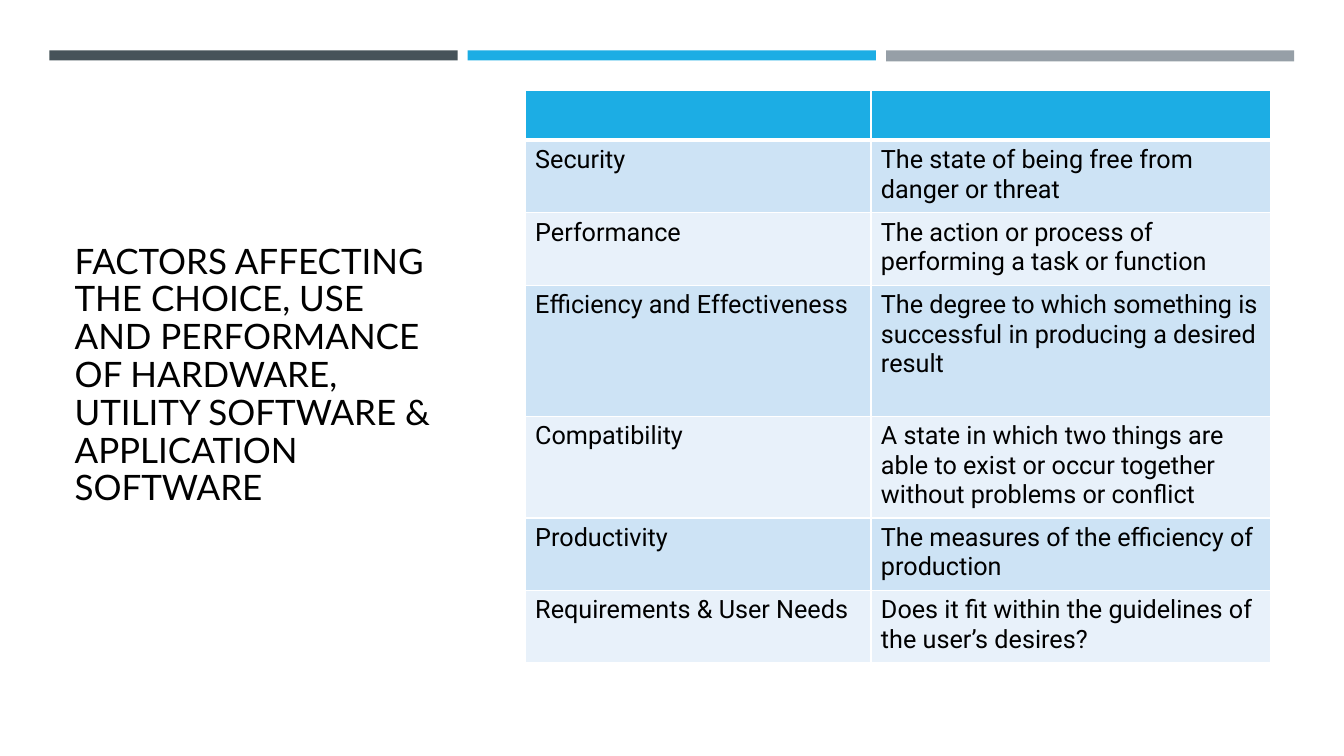
from typing import NamedTuple

from lxml.etree import SubElement
from pptx import Presentation
from pptx.dml.color import RGBColor
from pptx.enum.shapes import MSO_SHAPE as Shape
from pptx.enum.text import MSO_ANCHOR as Anchor, MSO_AUTO_SIZE as AutoSize, PP_ALIGN as Align
from pptx.oxml.ns import qn
from pptx.slide import Slide
from pptx.table import _Cell as Cell
from pptx.text.text import TextFrame
from pptx.util import Pt

WHITE, BLACK, BLUE = "FFFFFF", "000000", "1CADE4"
BAND_FILLS = ("CDE3F5", "E8F1FA")
BAR_LEFT, BAR_TOP, BAR_WIDTH, BAR_STEP = 35.3, 36, 291.6, 298.8
COLUMN_WIDTHS = (247, 285.8)
HEADER_HEIGHT = 35.3
TITLE = ("FACTORS AFFECTING THE CHOICE, USE AND PERFORMANCE OF HARDWARE, "
         "UTILITY SOFTWARE & APPLICATION SOFTWARE")


class Bar(NamedTuple):
    color: str
    height: float


class Factor(NamedTuple):
    name: str
    meaning: str
    height: float = 51.8


BARS = (Bar("465359", 7.2), Bar(BLUE, 7.2), Bar("969FA7", 7.9))
FACTORS = (
    Factor("Security", "The state of being free from danger or threat"),
    Factor("Performance", "The action or process of performing a task or function"),
    Factor("Efficiency and Effectiveness",
           "The degree to which something is successful in producing a desired result", 93.6),
    Factor("Compatibility",
           "A state in which two things are able to exist or occur together "
           "without problems or conflict", 72.7),
    Factor("Productivity", "The measures of the efficiency of production"),
    Factor("Requirements & User Needs",
           "Does it fit within the guidelines of the user’s desires?"),
)


def rgb(color: str) -> RGBColor:
    return RGBColor.from_string(color)


def write_text(frame: TextFrame, text: str, *, font: str, size: float,
               color: str = BLACK, line_spacing: float = 1.0) -> None:
    paragraph = frame.paragraphs[0]
    paragraph.alignment = Align.LEFT
    paragraph.line_spacing = line_spacing
    run = paragraph.add_run()
    run.text = text
    run.font.name = font
    run.font.size = Pt(size)
    run.font.bold = False
    run.font.color.rgb = rgb(color)


def draw_bar(slide: Slide, bar: Bar, position: int) -> None:
    shape = slide.shapes.add_shape(Shape.RECTANGLE, Pt(BAR_LEFT + position * BAR_STEP),
                                   Pt(BAR_TOP), Pt(BAR_WIDTH), Pt(bar.height))
    shape.shadow.inherit = False
    shape.fill.solid()
    shape.fill.fore_color.rgb = rgb(bar.color)
    shape.line.fill.background()


def format_cell(cell: Cell, fill: str, *, top: float = 1, bottom: float = 1) -> None:
    """Fill the cell and give it white borders; top and bottom are line widths."""
    cell.fill.solid()
    cell.fill.fore_color.rgb = rgb(fill)
    properties = cell._tc.get_or_add_tcPr()
    widths = {"a:lnL": 1, "a:lnR": 1, "a:lnT": top, "a:lnB": bottom}
    for index, (tag, width) in enumerate(widths.items()):
        line = SubElement(properties, qn(tag), w=str(Pt(width)))
        SubElement(SubElement(line, qn("a:solidFill")), qn("a:srgbClr"), val=WHITE)
        properties.insert(index, line)


def place_title(slide: Slide) -> None:
    title = slide.shapes.title
    title.left, title.top, title.width, title.height = Pt(46.1), Pt(120.2), Pt(268.6), Pt(273.6)
    frame = title.text_frame
    frame.word_wrap = True
    frame.auto_size = AutoSize.NONE
    frame.vertical_anchor = Anchor.BOTTOM
    frame.margin_bottom = Pt(30.6)
    write_text(frame, TITLE, font="Lato", size=25, line_spacing=0.9)


def draw_table(slide: Slide) -> None:
    heights = [HEADER_HEIGHT, *(factor.height for factor in FACTORS)]
    table = slide.shapes.add_table(len(heights), len(COLUMN_WIDTHS), Pt(375.1), Pt(64.8),
                                   Pt(sum(COLUMN_WIDTHS)), Pt(sum(heights))).table
    table.horz_banding = False
    for column, width in zip(table.columns, COLUMN_WIDTHS):
        column.width = Pt(width)
    for row, height in zip(table.rows, heights):
        row.height = Pt(height)
    for cell in table.rows[0].cells:
        format_cell(cell, BLUE, bottom=3)
    for index, factor in enumerate(FACTORS):
        for cell, text in zip(table.rows[index + 1].cells, (factor.name, factor.meaning)):
            format_cell(cell, BAND_FILLS[index % 2], top=3 if index == 0 else 1)
            write_text(cell.text_frame, text, font="Roboto", size=18)


def main() -> None:
    presentation = Presentation()
    presentation.slide_width, presentation.slide_height = Pt(960), Pt(540)
    slide = presentation.slides.add_slide(presentation.slide_layouts.get_by_name("Title Only"))
    for position, bar in enumerate(BARS):
        draw_bar(slide, bar, position)
    place_title(slide)
    draw_table(slide)
    presentation.save("out.pptx")


if __name__ == "__main__":
    main()
